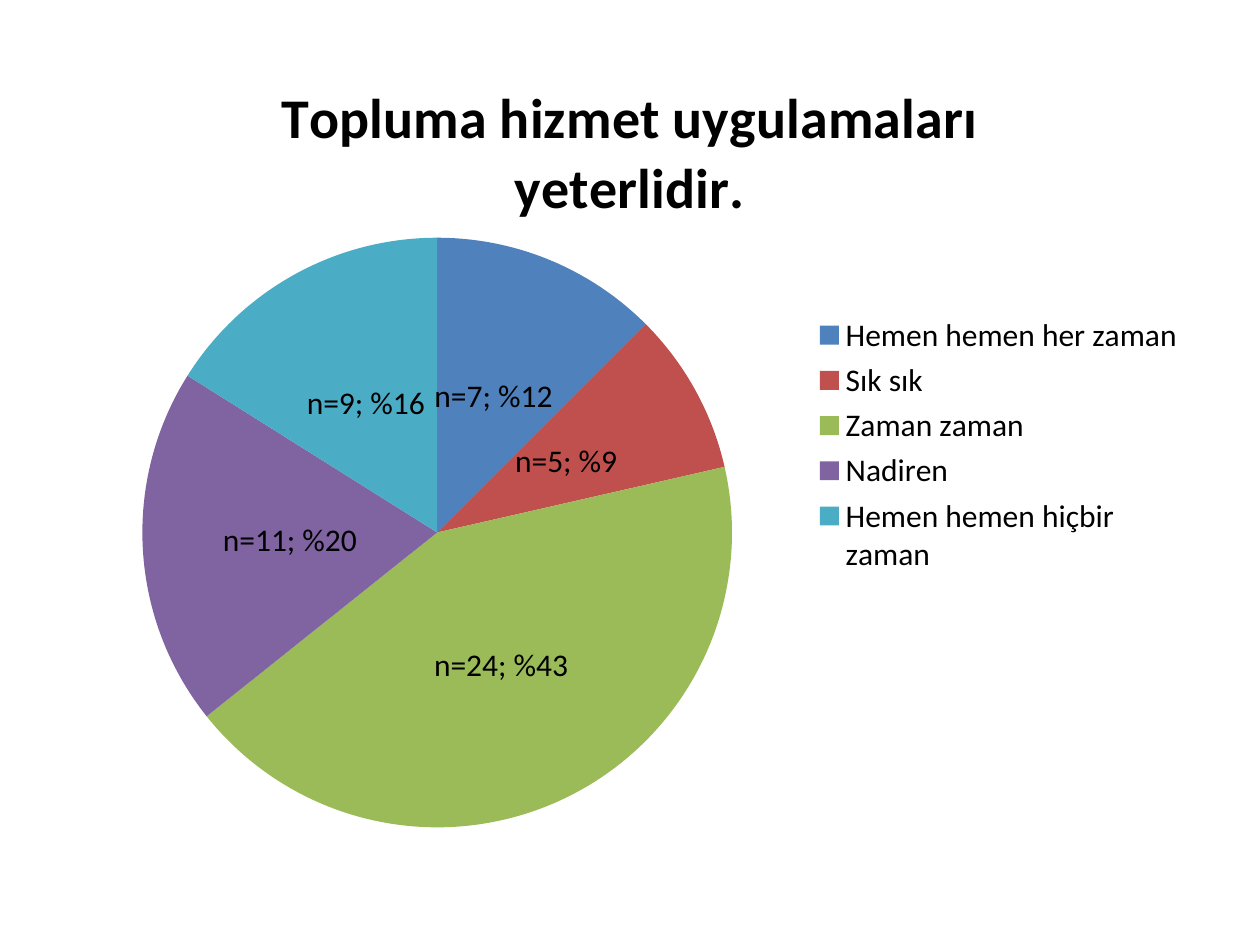
from lxml import etree
from pptx import Presentation
from pptx.chart.data import CategoryChartData
from pptx.dml.color import RGBColor
from pptx.enum.chart import (
    XL_CHART_TYPE as ChartType,
    XL_LABEL_POSITION as LabelPosition,
    XL_LEGEND_POSITION as LegendPosition,
)
from pptx.oxml.ns import qn
from pptx.util import Inches, Pt

COLORS = {
    "text": "000000",
    "Hemen hemen her zaman": "4F81BD",
    "Sık sık": "C0504D",
    "Zaman zaman": "9BBB59",
    "Nadiren": "8064A2",
    "Hemen hemen hiçbir zaman": "4BACC6",
}
STATEMENT = "Topluma hizmet uygulamaları yeterlidir."
ANSWERS = {
    "Hemen hemen her zaman": 7,
    "Sık sık": 5,
    "Zaman zaman": 24,
    "Nadiren": 11,
    "Hemen hemen hiçbir zaman": 9,
}


class SlideBuilder:
    font_name = "Calibri"
    body_size = 18
    title_size = 32

    def __init__(self, slide):
        self.slide = slide

    def style(self, font, size, bold=False):
        font.name = self.font_name
        font.size = Pt(size)
        font.bold = bold
        font.color.rgb = RGBColor.from_string(COLORS["text"])

    def place(self, part, **fractions):
        """Fix a chart part at fractions of the chart area."""
        old_layout = part.find(qn("c:layout"))
        if old_layout is not None:
            part.remove(old_layout)
        layout = etree.Element(qn("c:layout"))
        manual = etree.SubElement(layout, qn("c:manualLayout"))
        if part.tag == qn("c:plotArea"):
            etree.SubElement(manual, qn("c:layoutTarget"), val="inner")
        for axis in ("x", "y"):
            etree.SubElement(manual, qn(f"c:{axis}Mode"), val="edge")
        for key, value in fractions.items():
            etree.SubElement(manual, qn(f"c:{key}"), val=str(value))
        overlay = part.find(qn("c:overlay"))
        if overlay is None:
            part.insert(0, layout)
        else:
            overlay.addprevious(layout)

    def pie(self, title, answers, left, top, width, height):
        data = CategoryChartData()
        data.categories = list(answers)
        data.add_series(title, list(answers.values()))
        chart = self.slide.shapes.add_chart(
            ChartType.PIE, Inches(left), Inches(top),
            Inches(width), Inches(height), data).chart
        self.style(chart.font, self.body_size)

        # Title
        chart.has_title = True
        title_frame = chart.chart_title.text_frame
        title_frame.text = title
        self.style(title_frame.paragraphs[0].runs[0].font, self.title_size, bold=True)

        # Legend
        chart.has_legend = True
        chart.legend.position = LegendPosition.RIGHT
        chart.legend.include_in_layout = False
        self.style(chart.legend.font, self.body_size)

        # Slices with count and share
        plot = chart.plots[0]
        plot.vary_by_categories = True
        series = plot.series[0]
        labels = series.data_labels
        labels.show_value = labels.show_percentage = True
        labels.position = LabelPosition.CENTER
        total = sum(answers.values())
        for index, (answer, count) in enumerate(answers.items()):
            point = series.points[index]
            point.format.fill.solid()
            point.format.fill.fore_color.rgb = RGBColor.from_string(COLORS[answer])
            label = point.data_label
            label.text_frame.text = f"n={count}; %{round(100 * count / total)}"
            self.style(label.text_frame.paragraphs[0].runs[0].font, self.body_size)
            label.position = LabelPosition.CENTER
        return chart


def main():
    prs = Presentation()
    prs.slide_width, prs.slide_height = Inches(10), Inches(7.5)
    blank_layout = prs.slide_layouts[6]
    builder = SlideBuilder(prs.slides.add_slide(blank_layout))

    # Survey answers
    chart = builder.pie(STATEMENT, ANSWERS, 0.5, 0.36, 9, 6.34)
    builder.place(chart.element.find(".//" + qn("c:plotArea")),
                  x=0.07, y=0.24, w=0.52, h=0.74)
    builder.place(chart.legend.element if hasattr(chart.legend, "element")
                  else chart.element.find(".//" + qn("c:legend")),
                  x=0.66, y=0.33, w=0.33, h=0.34)

    prs.save("out.pptx")


if __name__ == "__main__":
    main()
